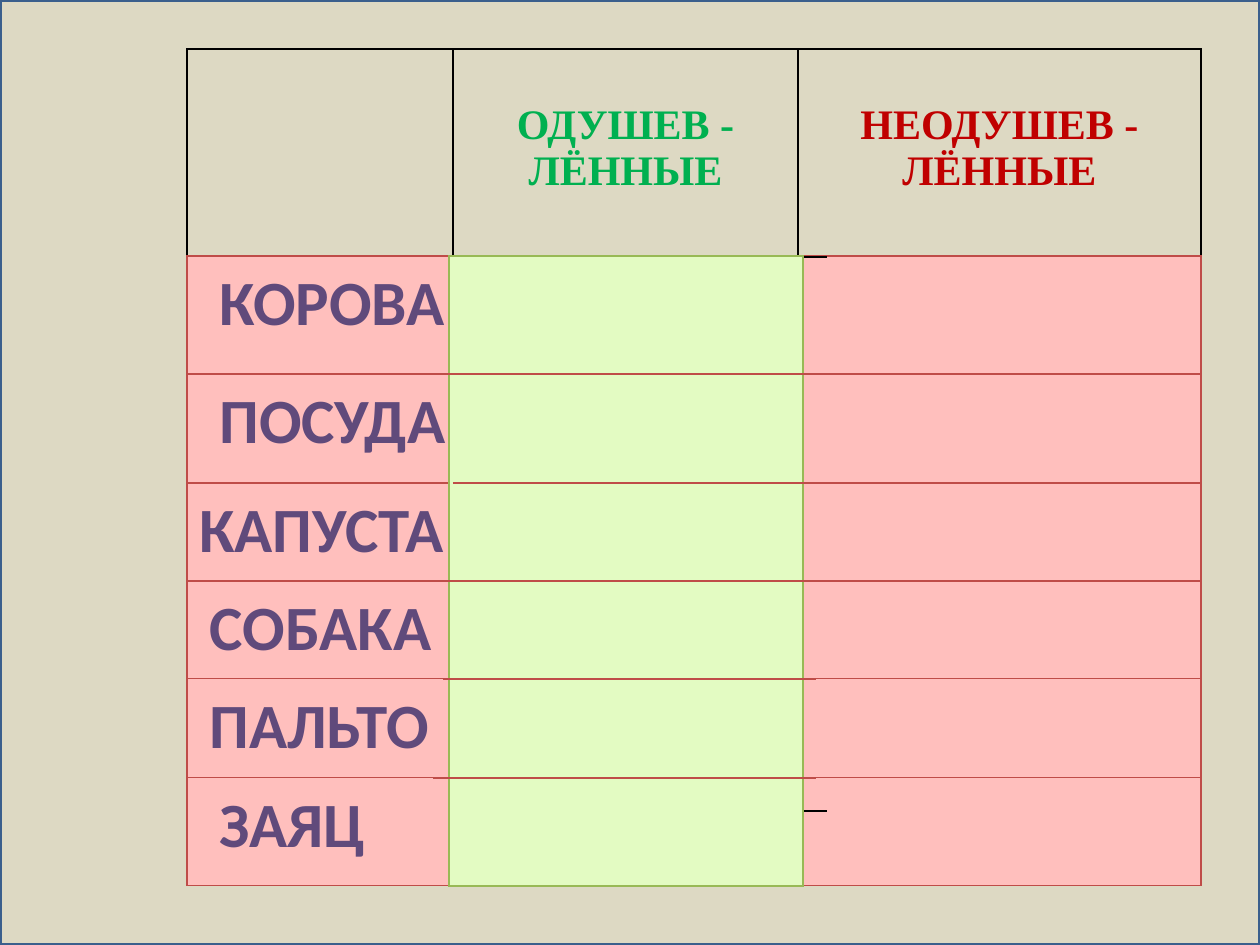
from lxml import etree
from pptx import Presentation
from pptx.dml.color import RGBColor
from pptx.enum.shapes import MSO_CONNECTOR, MSO_SHAPE
from pptx.enum.text import PP_ALIGN
from pptx.oxml.ns import qn
from pptx.util import Pt

PX = 914400 // 126
LINE = MSO_CONNECTOR.STRAIGHT
RECT = MSO_SHAPE.RECTANGLE
CENTER = PP_ALIGN.CENTER

HEX = {
    "sand": "DDD9C3", "frame": "3A5F8C", "black": "000000",
    "pink": "FFBFBD", "red": "BF4C48", "lime": "E3FBC2", "olive": "98B955",
    "green": "00B050", "crimson": "C00000", "violet": "604A7B",
}

LEFT, TOP, BODY = 187, 49, 256
WIDTH = 1014
HEADS = [
    ([], None),
    (["ОДУШЕВ -", "ЛЁННЫЕ"], "green"),
    (["НЕОДУШЕВ -", "ЛЁННЫЕ"], "crimson"),
]
HEAD_COLS = [266, 345, 403]
# word, left, box width, row height
WORDS = [
    ("КОРОВА", 207, 266, 118),
    ("ПОСУДА", 207, 286, 109),
    ("КАПУСТА", 187, 276, 98),
    ("СОБАКА", 197, 256, 98),
    ("ПАЛЬТО", 197, 246, 99),
    ("ЗАЯЦ", 207, 237, 108),
]
RULES = [(423, 816), (453, 807), (443, 807), (443, 816), (433, 816)]
STRIPS = [449, 797]


def rgb(name):
    return RGBColor.from_string(HEX[name])


def edge(cell, color, points, sides):
    """Draw the borders named in sides and clear the others."""
    props = cell._tc.get_or_add_tcPr()
    for side in "LRTB":
        line = etree.SubElement(props, qn("a:ln" + side))
        if side in sides:
            line.set("w", str(Pt(points)))
            fill = etree.SubElement(line, qn("a:solidFill"))
            etree.SubElement(fill, qn("a:srgbClr")).set("val", HEX[color])
        else:
            etree.SubElement(line, qn("a:noFill"))


def add_grid(slide, x, y, cols, rows, color, points, fill=None, sides="LRTB"):
    frame = slide.shapes.add_table(
        len(rows), len(cols), x * PX, y * PX, sum(cols) * PX, sum(rows) * PX)
    table = frame.table
    table.first_row = table.horz_banding = False
    for col, width in zip(table.columns, cols):
        col.width = width * PX
    for row, height in zip(table.rows, rows):
        row.height = height * PX
    for cell in table.iter_cells():
        edge(cell, color, points, sides)
        if fill:
            cell.fill.solid()
            cell.fill.fore_color.rgb = rgb(fill)
        else:
            cell.fill.background()
    return table


def style(para, size, font, color):
    para.font.size = Pt(size)
    para.font.name = font
    para.font.bold = True
    para.font.color.rgb = rgb(color)


def add_heads(slide):
    table = add_grid(slide, LEFT, TOP, HEAD_COLS, [BODY - TOP], "black", 1)
    for cell, (lines, color) in zip(table.iter_cells(), HEADS):
        if not lines:
            continue
        cell.margin_top = 53 * PX
        cell.text = "\n".join(lines)
        for para in cell.text_frame.paragraphs:
            para.alignment = CENTER
            style(para, 24, "Times New Roman", color)


def add_rule(slide, x1, x2, y):
    rule = slide.shapes.add_connector(LINE, x1 * PX, y * PX, x2 * PX, y * PX)
    rule.line.color.rgb = rgb("red")
    rule.line.width = Pt(0.75)
    etree.SubElement(rule._element.spPr, qn("a:effectLst"))


def add_word(slide, word, x, y, width):
    box = slide.shapes.add_textbox(x * PX, y * PX, width * PX, 89 * PX)
    frame = box.text_frame
    frame.word_wrap = True
    frame.text = word
    style(frame.paragraphs[0], 36, "Calibri", "violet")


def main():
    deck = Presentation()
    deck.slide_width, deck.slide_height = 1260 * PX, 945 * PX
    slide = deck.slides.add_slide(deck.slide_layouts[6])

    back = slide.shapes.add_shape(RECT, 0, 0, 1260 * PX, 945 * PX)
    back.shadow.inherit = False
    back.fill.solid()
    back.fill.fore_color.rgb = rgb("sand")
    back.line.color.rgb = rgb("frame")
    back.line.width = Pt(2)

    add_heads(slide)
    rows = [height for *_, height in WORDS]
    add_grid(slide, LEFT, BODY, [WIDTH], rows, "red", 0.75, "pink")
    for x in STRIPS:
        add_grid(slide, x, BODY + 1, [29], [554], "black", 1, sides="TB")
    add_grid(slide, STRIPS[0], BODY, [354], [sum(rows)], "olive", 0.75, "lime")

    tops = [BODY + sum(rows[:i]) for i in range(len(rows))]
    for (x1, x2), y in zip(RULES, tops[1:]):
        add_rule(slide, x1, x2, y)
    for (word, x, width, _), y in zip(WORDS, tops):
        add_word(slide, word, x, y, width)

    deck.save("out.pptx")


if __name__ == "__main__":
    main()
